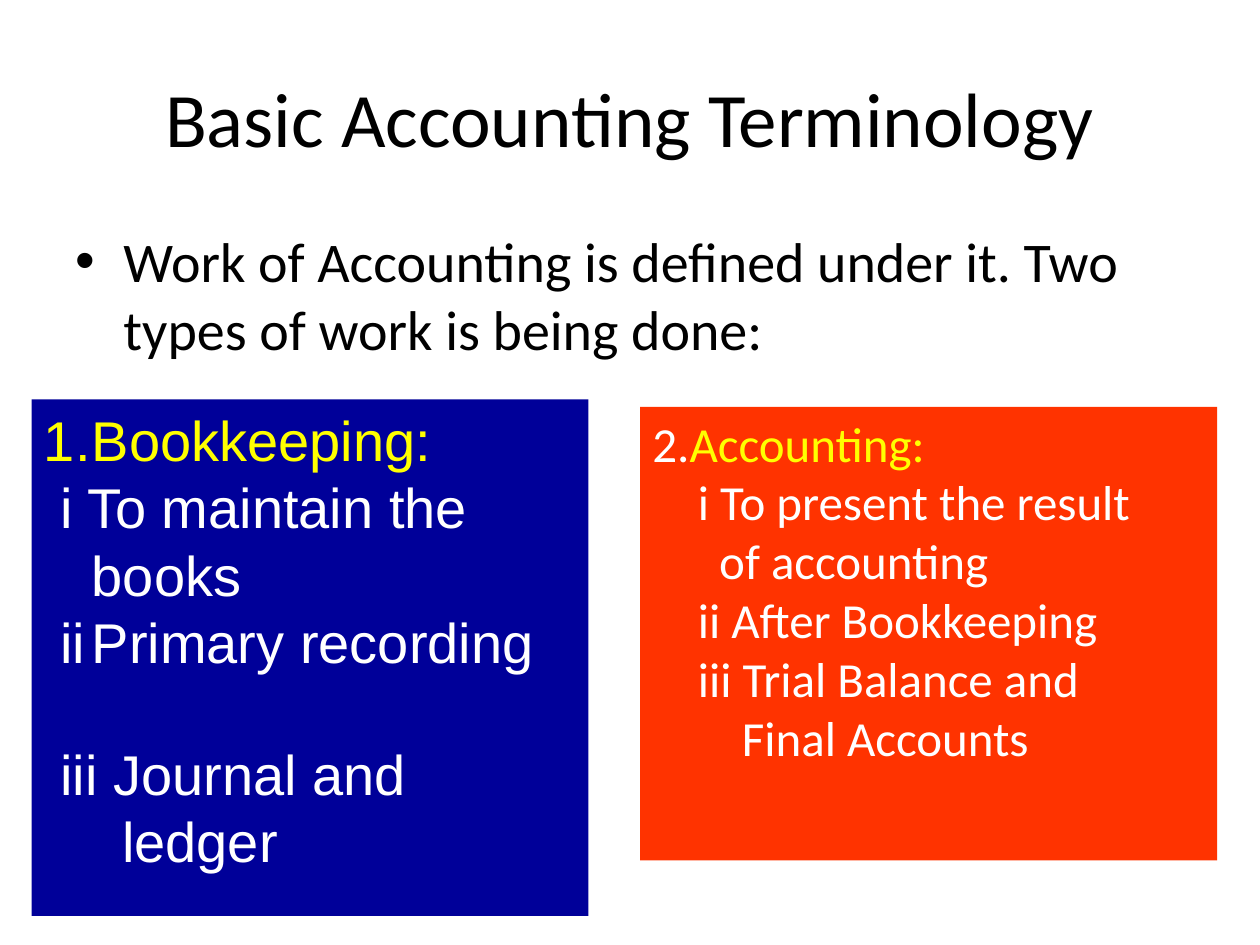
from lxml import etree
from pptx import Presentation
from pptx.dml.color import RGBColor
from pptx.enum.shapes import MSO_SHAPE
from pptx.enum.text import MSO_ANCHOR, PP_ALIGN
from pptx.oxml.ns import qn
from pptx.util import Inches, Pt

RECTANGLE = MSO_SHAPE.RECTANGLE
TOP, MIDDLE = MSO_ANCHOR.TOP, MSO_ANCHOR.MIDDLE
LEFT, CENTER = PP_ALIGN.LEFT, PP_ALIGN.CENTER

THEME = {
    "black": "000000", "white": "FFFFFF", "yellow": "FFFF00",
    "blue": "000099", "red": "FF3300",
    "heading_font": "Calibri", "panel_font": "Arial",
    "title_size": 44, "body_size": 32, "small_size": 28,
}
HANG = 0.38

TITLE = "Basic Accounting Terminology"
INTRO = "Work of Accounting is defined under it. Two types of work is being done:"

# Each line: coloured spans, left margin, first-line indent, space before, numbered
PANELS = [
    {
        "at": (0.25, 3.17, 4.42, 4.1), "fill": "blue",
        "font": "panel_font", "size": "body_size",
        "lines": [
            ([("Bookkeeping:", "yellow")], HANG, -HANG, 0, True),
            ([("i To maintain the books", "white")], HANG, -0.25, 0, False),
            ([("ii\tPrimary recording", "white")], HANG, -0.25, 0, False),
            ([("iii Journal and", "white")], HANG, -0.25, 37, False),
            ([("ledger", "white")], 0.62, 0, 0, False),
        ],
    },
    {
        "at": (5.08, 3.23, 4.58, 3.6), "fill": "red",
        "font": "heading_font", "size": "small_size",
        "lines": [
            ([("2.", "white"), ("Accounting:", "yellow")], 0, 0, 0, False),
            ([("i To present the result", "white")], 0.36, 0, 0, False),
            ([("of accounting", "white")], 0.53, 0, 0, False),
            ([("ii After Bookkeeping", "white")], 0.36, 0, 0, False),
            ([("iii Trial Balance and", "white")], 0.36, 0, 0, False),
            ([("Final Accounts", "white")], 0.71, 0, 0, False),
        ],
    },
]


def color(name):
    return RGBColor.from_string(THEME[name])


def style(span, font, size, color_name):
    span.font.name = THEME[font]
    span.font.size = Pt(THEME[size])
    span.font.color.rgb = color(color_name)


def place(box, at):
    box.left, box.top, box.width, box.height = map(Inches, at)


def indent(para, margin, first):
    properties = para._p.get_or_add_pPr()
    properties.set("marL", str(Inches(margin)))
    properties.set("indent", str(Inches(first)))
    return properties


def fill_placeholder(box, at, text, size, anchor, align):
    place(box, at)
    box.text_frame.text = text
    box.text_frame.vertical_anchor = anchor
    para = box.text_frame.paragraphs[0]
    para.alignment = align
    style(para.runs[0], "heading_font", size, "black")
    return para


def add_panel(page, panel):
    box = page.shapes.add_shape(RECTANGLE, *map(Inches, panel["at"]))
    box.shadow.inherit = False
    box.fill.solid()
    box.fill.fore_color.rgb = color(panel["fill"])
    box.line.fill.background()
    frame = box.text_frame
    frame.word_wrap = True
    frame.vertical_anchor = TOP
    for index, (spans, margin, first, before, numbered) in enumerate(panel["lines"]):
        para = frame.paragraphs[0] if index == 0 else frame.add_paragraph()
        para.alignment = LEFT
        para.space_before = Pt(before)
        properties = indent(para, margin, first)
        if numbered:
            etree.SubElement(properties, qn("a:buAutoNum"), type="arabicPeriod")
        for text, color_name in spans:
            span = para.add_run()
            span.text = text
            style(span, panel["font"], panel["size"], color_name)


def main():
    deck = Presentation()
    deck.slide_width, deck.slide_height = Inches(10), Inches(7.5)
    page = deck.slides.add_slide(deck.slide_layouts[1])
    title, body = page.placeholders
    fill_placeholder(title, (0.5, 0.3, 9, 1.25), TITLE, "title_size", MIDDLE, CENTER)
    intro = fill_placeholder(body, (0.5, 1.75, 9, 1.17), INTRO, "body_size", TOP, LEFT)
    properties = indent(intro, HANG, -HANG)
    etree.SubElement(properties, qn("a:buFont"), typeface="Arial")
    etree.SubElement(properties, qn("a:buChar"), char="•")
    for panel in PANELS:
        add_panel(page, panel)
    deck.save("out.pptx")


if __name__ == "__main__":
    main()
